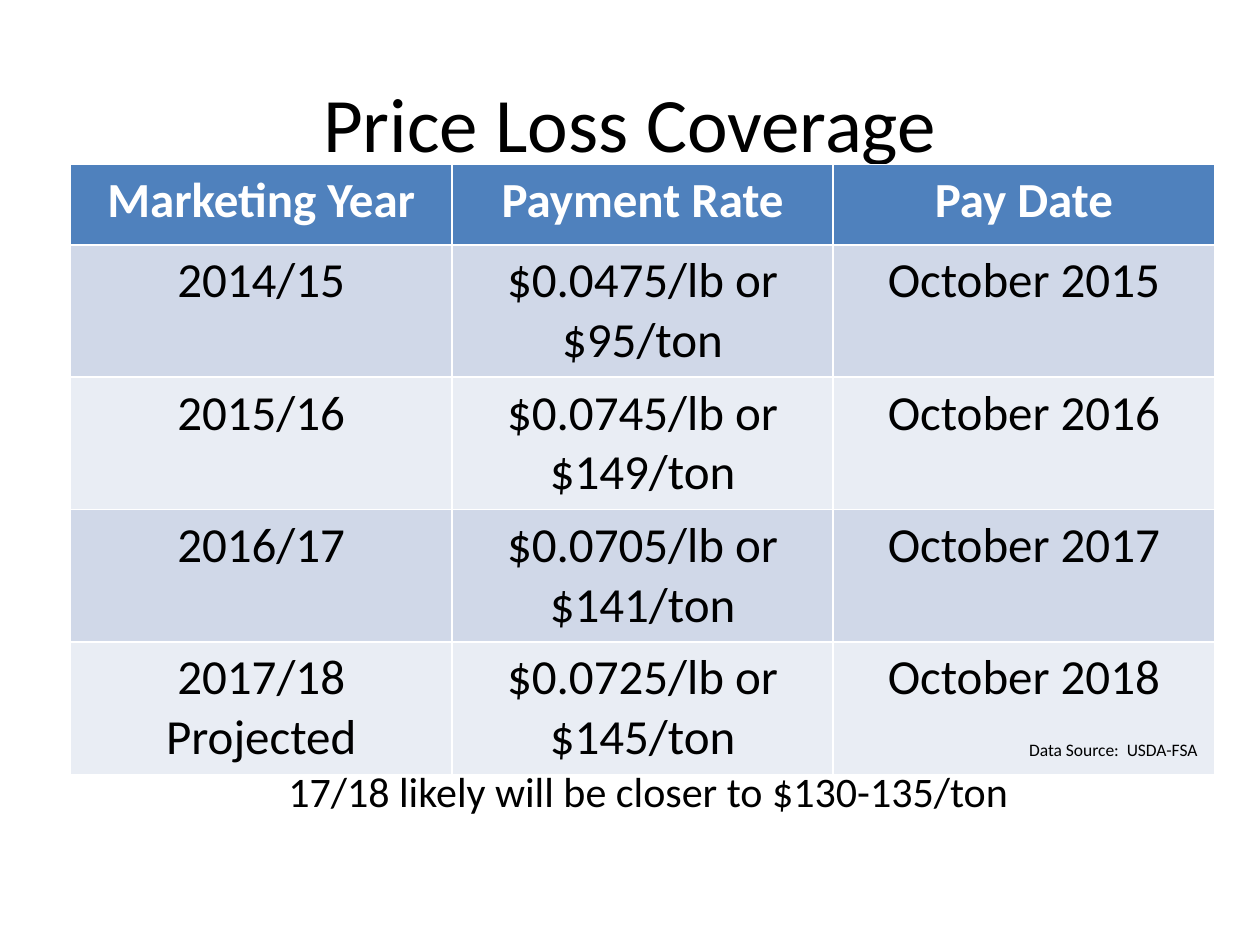
"""Build the Price Loss Coverage slide."""
from pptx import Presentation
from pptx.dml.color import RGBColor
from pptx.enum.text import MSO_ANCHOR, MSO_AUTO_SIZE, PP_ALIGN
from pptx.util import Inches, Pt

WIDTH, HEIGHT = 10, 7.5
ROWS = [
    ("Marketing Year", "Payment Rate", "Pay Date"),
    ("2014/15", "$0.0475/lb or $95/ton", "October 2015"),
    ("2015/16", "$0.0745/lb or $149/ton", "October 2016"),
    ("2016/17", "$0.0705/lb or $141/ton", "October 2017"),
    ("2017/18 Projected", "$0.0725/lb or $145/ton", "October 2018"),
]


def color(value):
    return RGBColor.from_string(value)


class CoverageSlide:
    font_name = "Calibri"
    ink, paper = "000000", "FFFFFF"
    header_fill, band_fills = "4F81BD", ("D0D8E8", "E9EDF4")

    def __init__(self, presentation):
        self.slide = presentation.slides.add_slide(presentation.slide_layouts[5])

    def area(self, left, top, width, height):
        return (Inches(left * WIDTH / 100), Inches(top * HEIGHT / 100),
                Inches(width * WIDTH / 100), Inches(height * HEIGHT / 100))

    def set_text(self, frame, text, size, ink=None, bold=False, align=PP_ALIGN.LEFT):
        frame.text = text
        paragraph = frame.paragraphs[0]
        paragraph.alignment = align
        font = paragraph.font
        font.name, font.size, font.bold = self.font_name, Pt(size), bold
        font.color.rgb = color(ink or self.ink)

    def title(self, text, share):
        shape = self.slide.shapes.title
        shape.left, shape.top, shape.width, shape.height = self.area(*share)
        frame = shape.text_frame
        frame.auto_size = MSO_AUTO_SIZE.NONE
        frame.vertical_anchor = MSO_ANCHOR.TOP
        frame.margin_top = Inches(0.09)
        self.set_text(frame, text, 44, align=PP_ALIGN.CENTER)

    def table(self, rows, share, header_height):
        table = self.slide.shapes.add_table(
            len(rows), len(rows[0]), *self.area(*share)).table
        table.rows[0].height = Inches(header_height * HEIGHT / 100)
        for row_index, row in enumerate(rows):
            header = row_index == 0
            fill = self.header_fill if header else self.band_fills[(row_index - 1) % 2]
            for column_index, text in enumerate(row):
                cell = table.cell(row_index, column_index)
                cell.fill.solid()
                cell.fill.fore_color.rgb = color(fill)
                self.set_text(cell.text_frame, text, 28,
                              self.paper if header else self.ink,
                              header, PP_ALIGN.CENTER)

    def note(self, text, share, size, anchor=MSO_ANCHOR.TOP):
        frame = self.slide.shapes.add_textbox(*self.area(*share)).text_frame
        frame.word_wrap = True
        frame.vertical_anchor = anchor
        self.set_text(frame, text, size)


def main():
    presentation = Presentation()
    presentation.slide_width, presentation.slide_height = Inches(WIDTH), Inches(HEIGHT)
    slide = CoverageSlide(presentation)
    slide.title("Price Loss Coverage", (5, 6.8, 90, 16.7))
    slide.table(ROWS, (5.6, 17.4, 90.8, 63.7), 8.5)
    slide.note("Data Source:  USDA-FSA", (80.7, 77.5, 16.4, 3.6), 10)
    slide.note("17/18 likely will be closer to $130-135/ton",
               (21.9, 80, 66.2, 7.3), 24, MSO_ANCHOR.MIDDLE)
    presentation.save("out.pptx")


if __name__ == "__main__":
    main()
